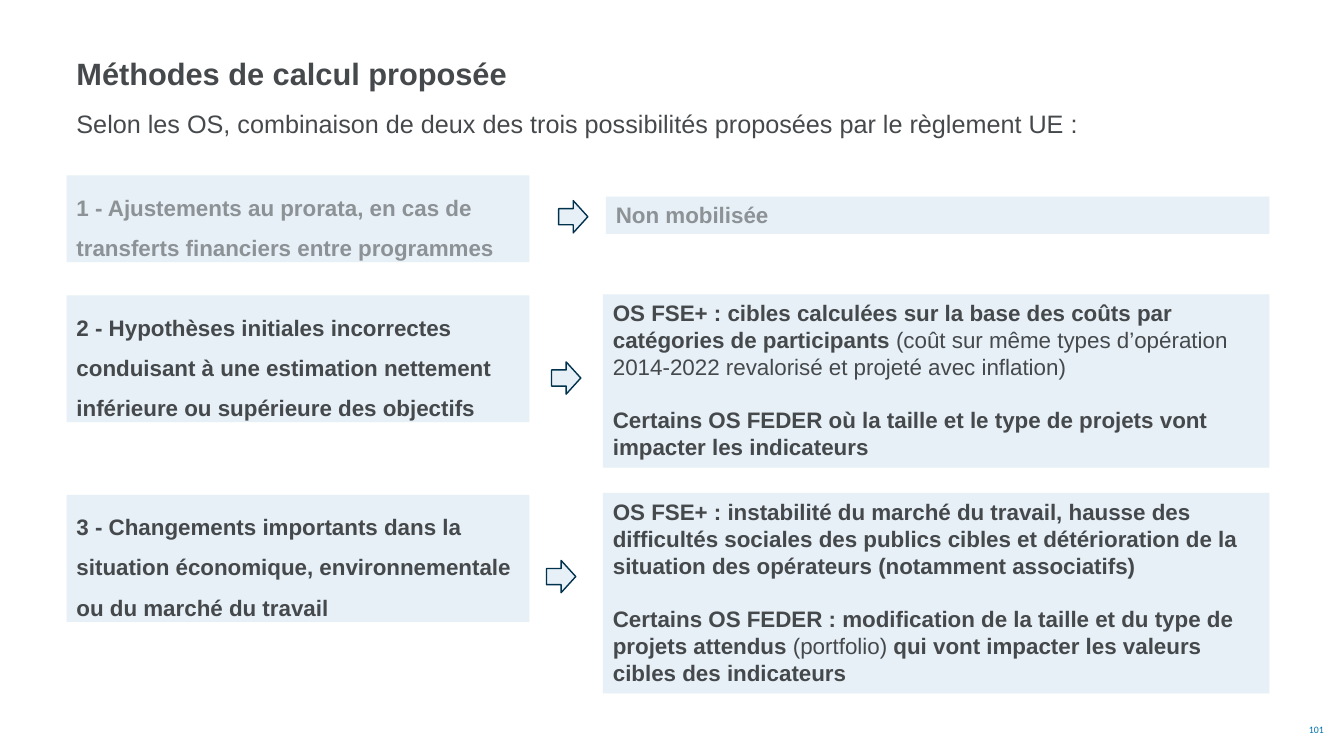
from dataclasses import dataclass
from pptx import Presentation
from pptx.dml.color import RGBColor
from pptx.enum.shapes import MSO_SHAPE as Shape
from pptx.enum.text import MSO_ANCHOR as Anchor, MSO_AUTO_SIZE as AutoSize, PP_ALIGN as Align
from pptx.util import Inches, Pt

TITLE = "Méthodes de calcul proposée"
INTRO = "Selon les OS, combinaison de deux des trois possibilités proposées par le règlement UE :"
PAGE = "101"

METHODS = [
    dict(
        active=False,
        method="1 - Ajustements au prorata, en cas de transferts financiers entre programmes",
        answer=[[("Non mobilisée", True)]],
        method_rows=(1.74, 0.86), answer_rows=(1.95, 0.37),
        answer_left=6.01, arrow_at=(5.54, 1.99),
    ),
    dict(
        active=True,
        method="2 - Hypothèses initiales incorrectes conduisant à une estimation nettement "
               "inférieure ou supérieure des objectifs",
        answer=[
            [("OS FSE+ : cibles calculées sur la base des coûts par catégories de participants ", True),
             ("(coût sur même types d’opération 2014-2022 revalorisé et projeté avec inflation)", False)],
            [("Certains OS FEDER où la taille et le type de projets vont impacter les indicateurs", True)],
        ],
        method_rows=(2.93, 1.26), answer_rows=(2.92, 1.72),
        answer_left=5.98, arrow_at=(5.47, 3.59),
    ),
    dict(
        active=True,
        method="3 - Changements importants dans la situation économique, environnementale "
               "ou du marché du travail",
        answer=[
            [("OS FSE+ : instabilité du marché du travail, hausse des difficultés sociales des publics "
              "cibles et détérioration de la situation des opérateurs (notamment associatifs)", True)],
            [("Certains OS FEDER : modification de la taille et du type de projets attendus ", True),
             ("(portfolio) ", False),
             ("qui vont impacter les valeurs cibles des indicateurs", True)],
        ],
        method_rows=(4.91, 1.26), answer_rows=(4.89, 1.99),
        answer_left=5.98, arrow_at=(5.42, 5.56),
    ),
]

LEFT, METHOD_WIDTH, RIGHT = 0.66, 4.59, 12.59
ARROW_SIZE = (0.29, 0.32)


@dataclass(frozen=True)
class Theme:
    font: str = "Arial"
    page_font: str = "Calibri"
    ink: str = "46494C"
    muted: str = "8D9296"
    panel: str = "E6F0F6"
    outline: str = "00324E"
    page_ink: str = "0072B1"
    title: float = 22
    intro: float = 18
    body: float = 16
    page: float = 7
    paragraph_gap: float = 19


THEME = Theme()


def rgb(value):
    return RGBColor.from_string(value)


def write(box, paragraphs, size=THEME.body, color=THEME.ink, font=THEME.font,
          spacing=None, align=Align.LEFT, anchor=Anchor.TOP, fit=AutoSize.SHAPE_TO_FIT_TEXT):
    frame = box.text_frame
    frame.word_wrap = True
    frame.auto_size = fit
    frame.vertical_anchor = anchor
    for index, runs in enumerate(paragraphs):
        paragraph = frame.add_paragraph() if index else frame.paragraphs[0]
        paragraph.alignment = align
        if spacing:
            paragraph.line_spacing = spacing
        if index:
            paragraph.space_before = Pt(THEME.paragraph_gap)
        for text, bold in runs:
            run = paragraph.add_run()
            run.text = text
            run.font.name, run.font.size, run.font.bold = font, Pt(size), bold
            run.font.color.rgb = rgb(color)
    return frame


def add_text(slide, area, text, bold=False, **style):
    return write(slide.shapes.add_textbox(*map(Inches, area)), [[(text, bold)]], **style)


def add_panel(slide, area, kind=Shape.RECTANGLE, outline=None):
    panel = slide.shapes.add_shape(kind, *map(Inches, area))
    panel.shadow.inherit = False
    panel.fill.solid()
    panel.fill.fore_color.rgb = rgb(THEME.panel)
    if outline:
        panel.line.color.rgb = rgb(outline)
        panel.line.width = Pt(1)
    else:
        panel.line.fill.background()
    return panel


def add_method(slide, row):
    color = THEME.ink if row["active"] else THEME.muted
    top, height = row["method_rows"]
    method = add_panel(slide, (LEFT, top, METHOD_WIDTH, height))
    write(method, [[(row["method"], True)]], color=color, spacing=1.5)
    top, height = row["answer_rows"]
    left = row["answer_left"]
    answer = add_panel(slide, (left, top, RIGHT - left, height))
    write(answer, row["answer"], color=color)
    add_panel(slide, row["arrow_at"] + ARROW_SIZE, Shape.RIGHT_ARROW, THEME.outline)


def main():
    deck = Presentation()
    deck.slide_width, deck.slide_height = Inches(13.33), Inches(7.5)
    slide = deck.slides.add_slide(deck.slide_layouts[6])
    add_text(slide, (LEFT, 0.54, 6.84, 0.43), TITLE, bold=True, size=THEME.title, spacing=0.9)
    add_text(slide, (LEFT, 1.03, 12.05, 0.4), INTRO, size=THEME.intro)
    for row in METHODS:
        add_method(slide, row)
    page = add_text(slide, (12.82, 7.14, 0.36, 0.2), PAGE, size=THEME.page, color=THEME.page_ink,
                    font=THEME.page_font, align=Align.RIGHT, anchor=Anchor.MIDDLE, fit=AutoSize.NONE)
    page.margin_left = page.margin_right = Inches(0.05)
    page.margin_top = page.margin_bottom = 0
    deck.save("out.pptx")


if __name__ == "__main__":
    main()
